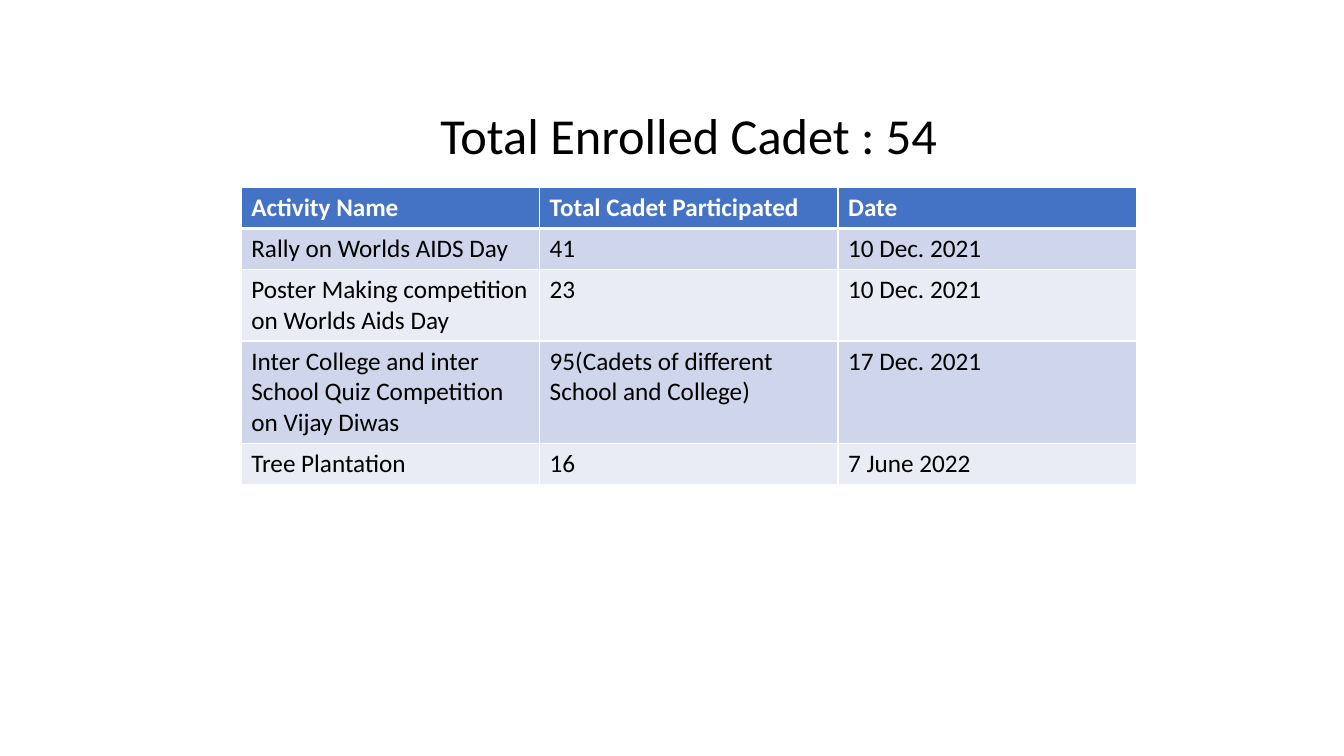
from dataclasses import dataclass

from lxml.etree import SubElement
from pptx import Presentation
from pptx.dml.color import RGBColor as Color
from pptx.enum.text import MSO_ANCHOR as Anchor, PP_ALIGN as Align
from pptx.oxml.ns import qn
from pptx.util import Cm, Pt


@dataclass(frozen=True)
class Theme:
    font: str = "Calibri"
    title_size: int = 36
    table_size: int = 18
    text: str = "000000"
    header_text: str = "FFFFFF"
    header_fill: str = "4472C4"
    band_fills: tuple = ("CFD5EA", "E9EBF5")
    border: str = "FFFFFF"
    border_width: int = 1
    header_rule_width: int = 3


THEME = Theme()
TITLE = "Total Enrolled Cadet : 54"
HEADER = ("Activity Name", "Total Cadet Participated", "Date")
ACTIVITIES = (
    ("Rally on Worlds AIDS Day", "41", "10 Dec. 2021"),
    ("Poster Making competition on Worlds Aids Day", "23", "10 Dec. 2021"),
    ("Inter College and inter School Quiz Competition on Vijay Diwas",
     "95(Cadets of different School and College)", "17 Dec. 2021"),
    ("Tree Plantation", "16", "7 June 2022"),
)
ROW_HEIGHTS = (1.03, 1.03, 1.78, 2.55, 1.03)
COLUMN_WIDTH = 7.52


def write_text(text_frame, text, *, size, color, bold=False, align=Align.LEFT):
    paragraph = text_frame.paragraphs[0]
    paragraph.alignment = align
    run = paragraph.add_run()
    run.text = text
    run.font.name = THEME.font
    run.font.size = Pt(size)
    run.font.bold = bold
    run.font.color.rgb = Color.from_string(color)


def set_borders(cell, top, bottom):
    properties = cell._tc.get_or_add_tcPr()
    side = THEME.border_width
    for tag, width in (("lnL", side), ("lnR", side), ("lnT", top), ("lnB", bottom)):
        line = SubElement(properties, qn(f"a:{tag}"), w=str(Pt(width)))
        fill = SubElement(line, qn("a:solidFill"))
        SubElement(fill, qn("a:srgbClr"), val=THEME.border)


def add_title(slide):
    title = slide.shapes.title
    title.left, title.top, title.width, title.height = Cm(10.64), Cm(2.49), Cm(13.44), Cm(1.8)
    title.text_frame.vertical_anchor = Anchor.MIDDLE
    write_text(title.text_frame, TITLE, size=THEME.title_size, color=THEME.text,
               align=Align.CENTER)


def fill_cell(cell, text, row_index):
    is_header = row_index == 0
    thin, thick = THEME.border_width, THEME.header_rule_width
    set_borders(cell, thick if row_index == 1 else thin, thick if is_header else thin)
    cell.fill.solid()
    fill = THEME.header_fill if is_header else THEME.band_fills[(row_index - 1) % 2]
    cell.fill.fore_color.rgb = Color.from_string(fill)
    write_text(cell.text_frame, text, size=THEME.table_size, bold=is_header,
               color=THEME.header_text if is_header else THEME.text)


def add_activity_table(slide):
    rows = (HEADER, *ACTIVITIES)
    table = slide.shapes.add_table(
        len(rows), len(HEADER), Cm(6.08), Cm(4.73),
        Cm(COLUMN_WIDTH * len(HEADER)), Cm(sum(ROW_HEIGHTS))).table
    for column in table.columns:
        column.width = Cm(COLUMN_WIDTH)
    for row_index, (texts, height) in enumerate(zip(rows, ROW_HEIGHTS)):
        table.rows[row_index].height = Cm(height)
        for column_index, text in enumerate(texts):
            fill_cell(table.cell(row_index, column_index), text, row_index)


def main():
    presentation = Presentation()
    presentation.slide_width, presentation.slide_height = Cm(33.87), Cm(19.05)
    slide = presentation.slides.add_slide(presentation.slide_layouts[5])
    add_title(slide)
    add_activity_table(slide)
    presentation.save("out.pptx")


if __name__ == "__main__":
    main()
